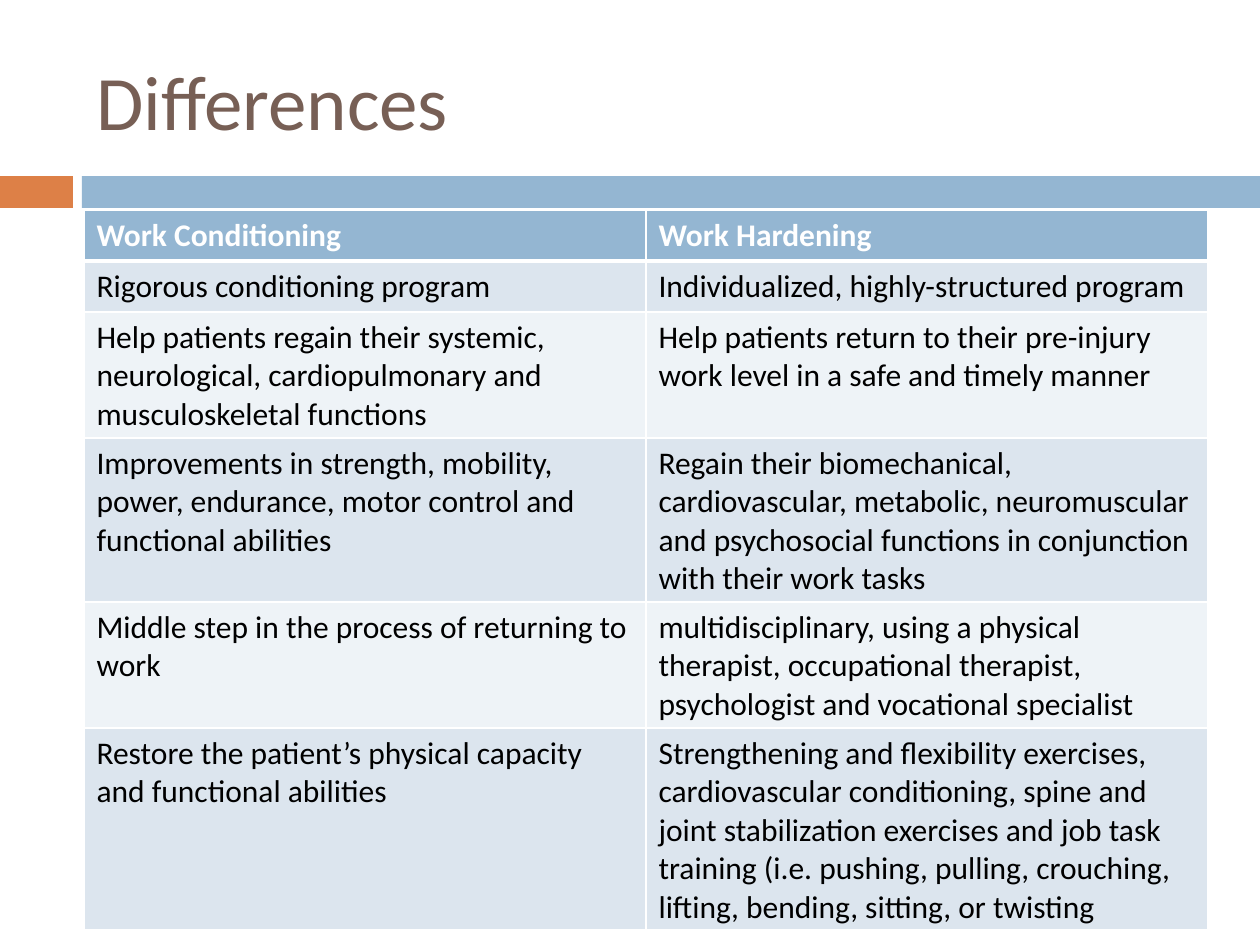
from lxml.etree import SubElement
from pptx import Presentation
from pptx.dml.color import RGBColor
from pptx.enum.shapes import MSO_SHAPE
from pptx.enum.text import MSO_ANCHOR
from pptx.oxml.ns import qn
from pptx.util import Emu, Pt

PX = 914400 / 126
FONT = "Calibri"
WHITE = RGBColor(0xFF, 0xFF, 0xFF)
BLACK = RGBColor(0x00, 0x00, 0x00)
BROWN = RGBColor(0x77, 0x5F, 0x55)
ORANGE = RGBColor(0xDD, 0x80, 0x47)
BLUE = RGBColor(0x94, 0xB6, 0xD2)
BANDS = (RGBColor(0xDC, 0xE5, 0xEE), RGBColor(0xEE, 0xF3, 0xF7))

ROWS = [
    ("Work Conditioning", "Work Hardening"),
    ("Rigorous conditioning program", "Individualized, highly-structured program"),
    ("Help patients regain their systemic, neurological, cardiopulmonary and "
     "musculoskeletal functions",
     "Help patients return to their pre-injury work level in a safe and timely manner"),
    ("Improvements in strength, mobility, power, endurance, motor control and "
     "functional abilities",
     "Regain their biomechanical, cardiovascular, metabolic, neuromuscular and "
     "psychosocial functions in conjunction with their work tasks"),
    ("Middle step in the process of returning to work",
     "multidisciplinary, using a physical therapist, occupational therapist, "
     "psychologist and vocational specialist"),
    ("Restore the patient’s physical capacity and functional abilities",
     "Strengthening and flexibility exercises, cardiovascular conditioning, spine and "
     "joint stabilization exercises and job task training (i.e. pushing, pulling, "
     "crouching, lifting, bending, sitting, or twisting"),
]


def px(n):
    """Turn pixels into EMU."""
    return Emu(round(n * PX))


def style_text(tf, size, color, bold=False):
    """Format every run of a text frame."""
    for p in tf.paragraphs:
        for r in p.runs:
            r.font.name = FONT
            r.font.size = Pt(size)
            r.font.bold = bold
            r.font.color.rgb = color


def add_bar(slide, x, y, w, h, color):
    """Add a plain filled rectangle."""
    sp = slide.shapes.add_shape(MSO_SHAPE.RECTANGLE, px(x), px(y), px(w), px(h))
    sp.shadow.inherit = False
    sp.fill.solid()
    sp.fill.fore_color.rgb = color
    sp.line.fill.background()


def add_title(slide, text, x, y, w, h):
    """Add the slide heading."""
    tf = slide.shapes.add_textbox(px(x), px(y), px(w), px(h)).text_frame
    tf.word_wrap = True
    tf.vertical_anchor = MSO_ANCHOR.MIDDLE
    tf.text = text
    style_text(tf, 44, BROWN)


def set_borders(cell, **widths):
    """Draw white cell borders with the given widths in points."""
    tc_pr = cell._tc.get_or_add_tcPr()
    for side, width in widths.items():
        ln = SubElement(tc_pr, qn(f"a:ln{side}"), w=str(Pt(width)))
        fill = SubElement(ln, qn("a:solidFill"))
        SubElement(fill, qn("a:srgbClr"), val=str(WHITE))


def add_comparison(slide, rows, x, y, w, row_h):
    """Add the banded comparison table with its header row."""
    frame = slide.shapes.add_table(len(rows), len(rows[0]), px(x), px(y),
                                   px(w), px(row_h * len(rows)))
    for i, texts in enumerate(rows):
        header = i == 0
        for j, text in enumerate(texts):
            cell = frame.table.cell(i, j)
            cell.text = text
            style_text(cell.text_frame, 18, WHITE if header else BLACK, header)
            set_borders(cell, L=1, R=1, T=3 if i == 1 else 1, B=3 if header else 1)
            cell.fill.solid()
            cell.fill.fore_color.rgb = BLUE if header else BANDS[(i - 1) % 2]


def main():
    """Build the slide and save it."""
    prs = Presentation()
    prs.slide_width, prs.slide_height = px(1260), px(945)
    slide = prs.slides.add_slide(prs.slide_layouts[6])
    add_bar(slide, 0, 176, 73, 32, ORANGE)
    add_bar(slide, 82, 176, 1178, 32, BLUE)
    add_title(slide, "Differences", 84, 32, 1124, 136)
    add_comparison(slide, ROWS, 84, 210, 1124, 51)
    prs.save("out.pptx")


if __name__ == "__main__":
    main()
